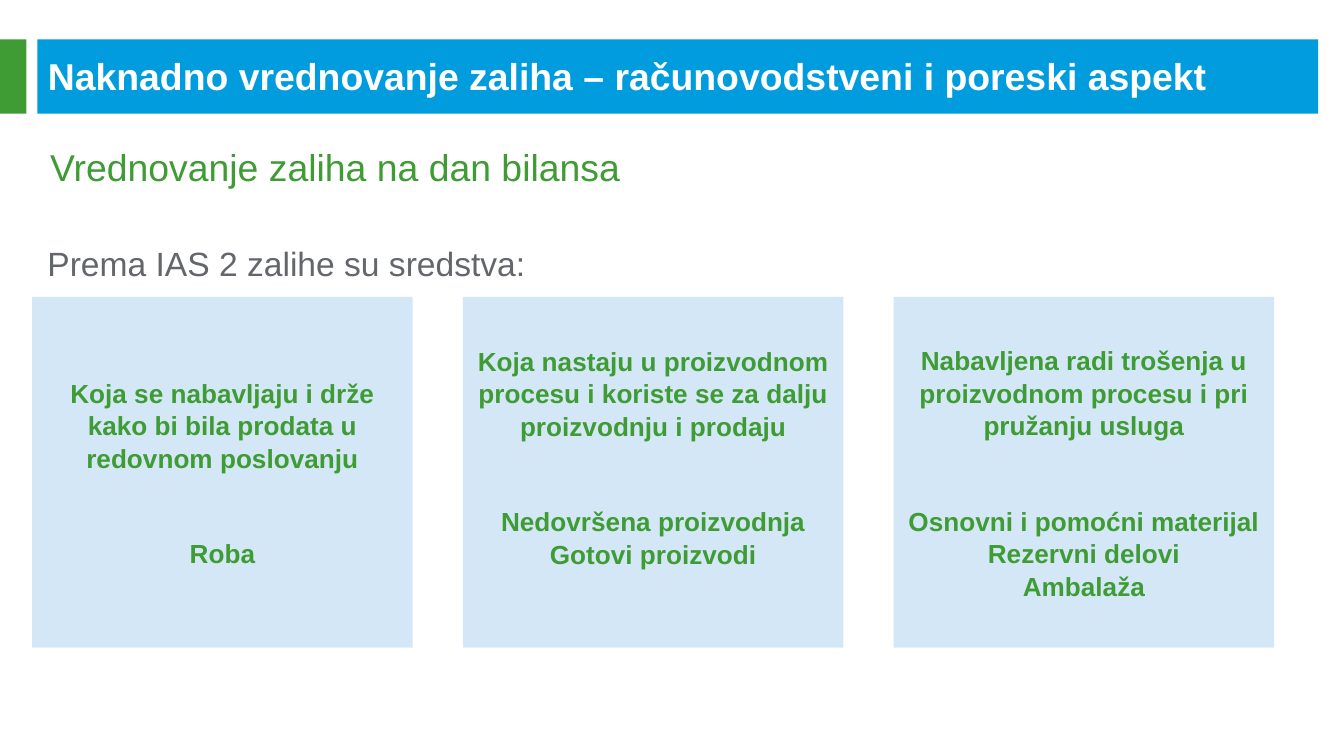
from dataclasses import dataclass
from lxml.etree import SubElement
from pptx import Presentation
from pptx.dml.color import RGBColor as RGB
from pptx.enum.shapes import MSO_SHAPE as Kind
from pptx.enum.text import MSO_ANCHOR as Anchor, MSO_AUTO_SIZE as Fit, PP_ALIGN as Align
from pptx.oxml.ns import qn
from pptx.shapes.base import BaseShape
from pptx.slide import Slide
from pptx.text.text import TextFrame, _Paragraph as Para
from pptx.util import Pt


@dataclass(frozen=True)
class Theme:
    font: str = "Arial"
    blue: RGB = RGB(0x00, 0x9C, 0xDE)
    green: RGB = RGB(0x3F, 0x9C, 0x35)
    pale: RGB = RGB(0xD4, 0xE7, 0xF7)
    gray: RGB = RGB(0x63, 0x66, 0x6A)
    white: RGB = RGB(0xFF, 0xFF, 0xFF)
    head: float = 20
    lead: float = 18
    card: float = 14


@dataclass(frozen=True)
class Box:
    left: float
    top: float
    width: float
    height: float


@dataclass(frozen=True)
class Card:
    text: str
    items: tuple[str, ...]
    lift: float = 0


THEME = Theme()
LINE = 16.8
PITCH = 230.75
CARDS = (
    Card("Koja se nabavljaju i drže kako bi bila prodata u redovnom poslovanju",
         ("Roba",)),
    Card("Koja nastaju u proizvodnom procesu i koriste se za dalju proizvodnju i prodaju",
         ("Nedovršena proizvodnja", "Gotovi proizvodi"), LINE),
    Card("Nabavljena radi trošenja u proizvodnom procesu i pri pružanju usluga",
         ("Osnovni i pomoćni materijal", "Rezervni delovi", "Ambalaža")),
)


def place(shape: BaseShape, box: Box) -> None:
    shape.left, shape.top = Pt(box.left), Pt(box.top)
    shape.width, shape.height = Pt(box.width), Pt(box.height)


def block(slide: Slide, box: Box, fill: RGB) -> BaseShape:
    shape = slide.shapes.add_shape(
        Kind.RECTANGLE, Pt(box.left), Pt(box.top), Pt(box.width), Pt(box.height))
    shape.shadow.inherit = False
    shape.fill.solid()
    shape.fill.fore_color.rgb = fill
    shape.line.fill.background()
    return shape


def setup(frame: TextFrame, anchor: Anchor, left: float, top: float, foot: float) -> None:
    frame.word_wrap = True
    frame.auto_size = Fit.NONE
    frame.vertical_anchor = anchor
    frame.margin_left = frame.margin_right = Pt(left)
    frame.margin_top, frame.margin_bottom = Pt(top), Pt(foot)


def write(para: Para, text: str, size: float, color: RGB, bold: bool = False,
          align: Align = Align.LEFT) -> None:
    para.alignment = align
    para.space_before = Pt(0)
    run = para.add_run()
    run.text = text
    run.font.name = THEME.font
    run.font.size = Pt(size)
    run.font.bold = bold
    run.font.color.rgb = color


def label(shape: BaseShape, box: Box, text: str, size: float, color: RGB,
          left: float, top: float) -> None:
    place(shape, box)
    setup(shape.text_frame, Anchor.TOP, left, top, 0)
    para = shape.text_frame.paragraphs[0]
    props = para._p.get_or_add_pPr()
    props.set("marL", "0")
    props.set("indent", "0")
    SubElement(props, qn("a:buNone"))
    write(para, text, size, color)


def panel(slide: Slide, card: Card, left: float) -> None:
    shape = block(slide, Box(left, 159.1, 203.8, 187.9), THEME.pale)
    frame = shape.text_frame
    setup(frame, Anchor.MIDDLE, 7.2, 3.6, 3.6 + card.lift)
    for num, text in enumerate((card.text, *card.items)):
        para = frame.add_paragraph() if num else frame.paragraphs[0]
        write(para, text, THEME.card, THEME.green, True, Align.CENTER)
        para.line_spacing = 1.04
        if num == 1:
            para.space_before = Pt(2 * LINE)


def main() -> None:
    deck = Presentation()
    deck.slide_width, deck.slide_height = Pt(720), Pt(405)
    slide = deck.slides.add_slide(deck.slide_layouts[1])
    title, body = slide.placeholders

    bar = block(slide, Box(20, 21.1, 686.2, 39.8), THEME.blue)
    tab = block(slide, Box(0, 21.1, 14.2, 39.8), THEME.green)
    for shape in (bar, tab):
        title._element.addprevious(shape._element)

    place(title, Box(20, 28.1, 674, 21.6))
    setup(title.text_frame, Anchor.MIDDLE, 5.6, 3.6, 0)
    write(title.text_frame.paragraphs[0],
          "Naknadno vrednovanje zaliha – računovodstveni i poreski aspekt",
          THEME.head, THEME.white, True)

    label(body, Box(20, 72, 686.2, 38.2), "Vrednovanje zaliha na dan bilansa",
          THEME.head, THEME.green, 6.8, 5.4)
    for num, card in enumerate(CARDS):
        panel(slide, card, 17.3 + num * PITCH)

    intro = slide.shapes.add_textbox(0, 0, 0, 0)
    label(intro, Box(19.4, 125.3, 596.9, 28.8), "Prema IAS 2 zalihe su sredstva:",
          THEME.lead, THEME.gray, 6, 5)
    deck.save("out.pptx")


if __name__ == "__main__":
    main()
